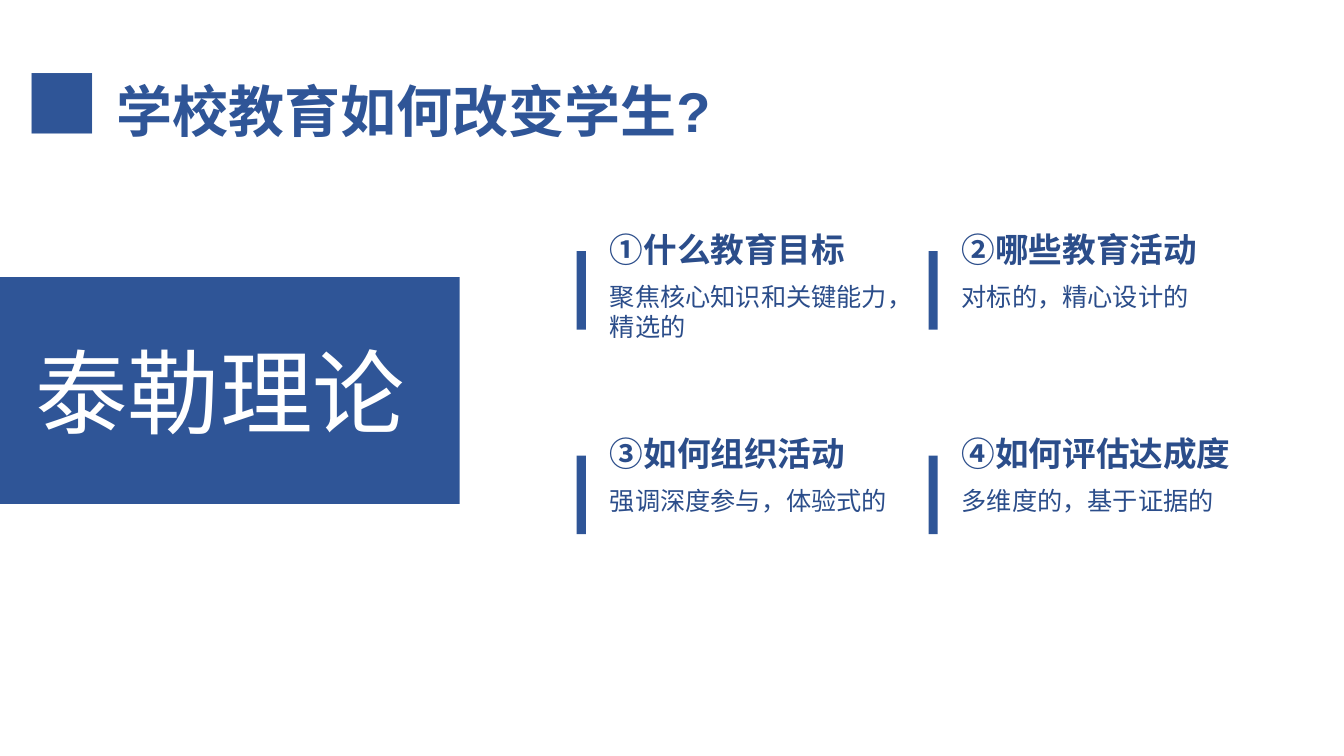
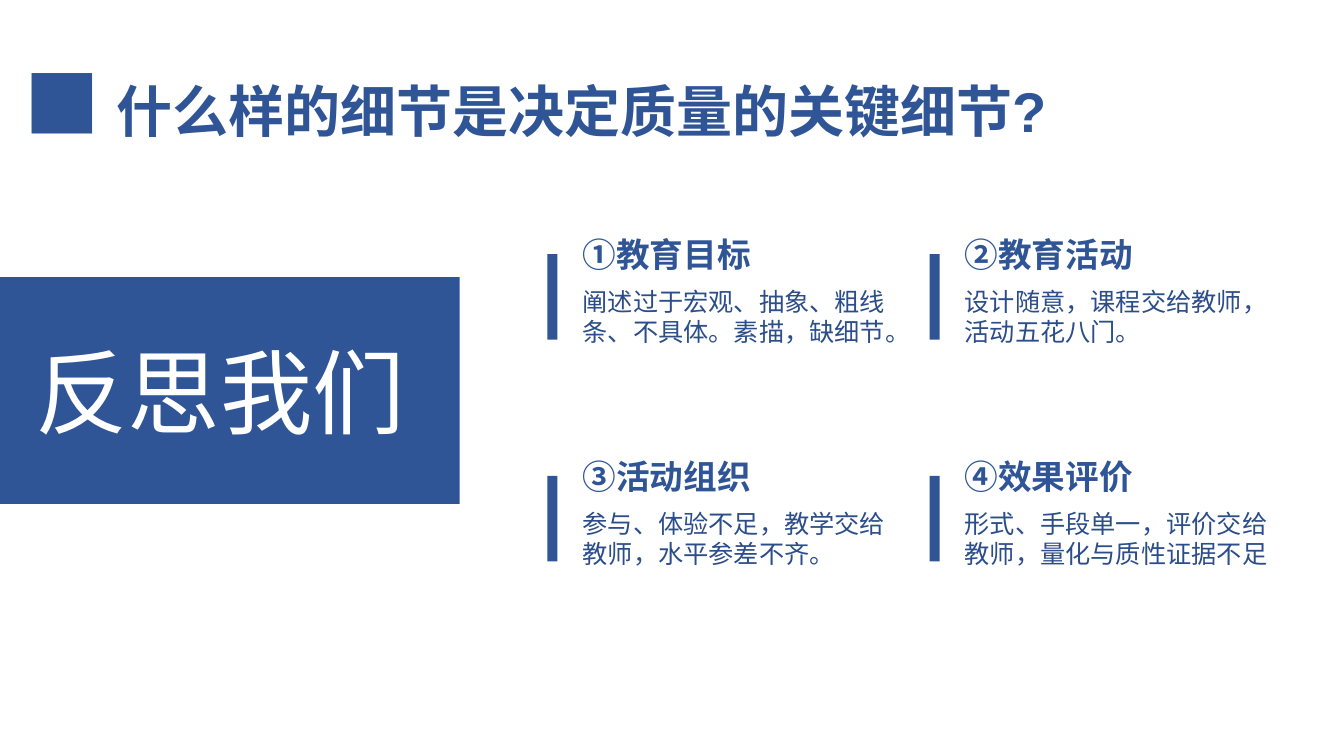
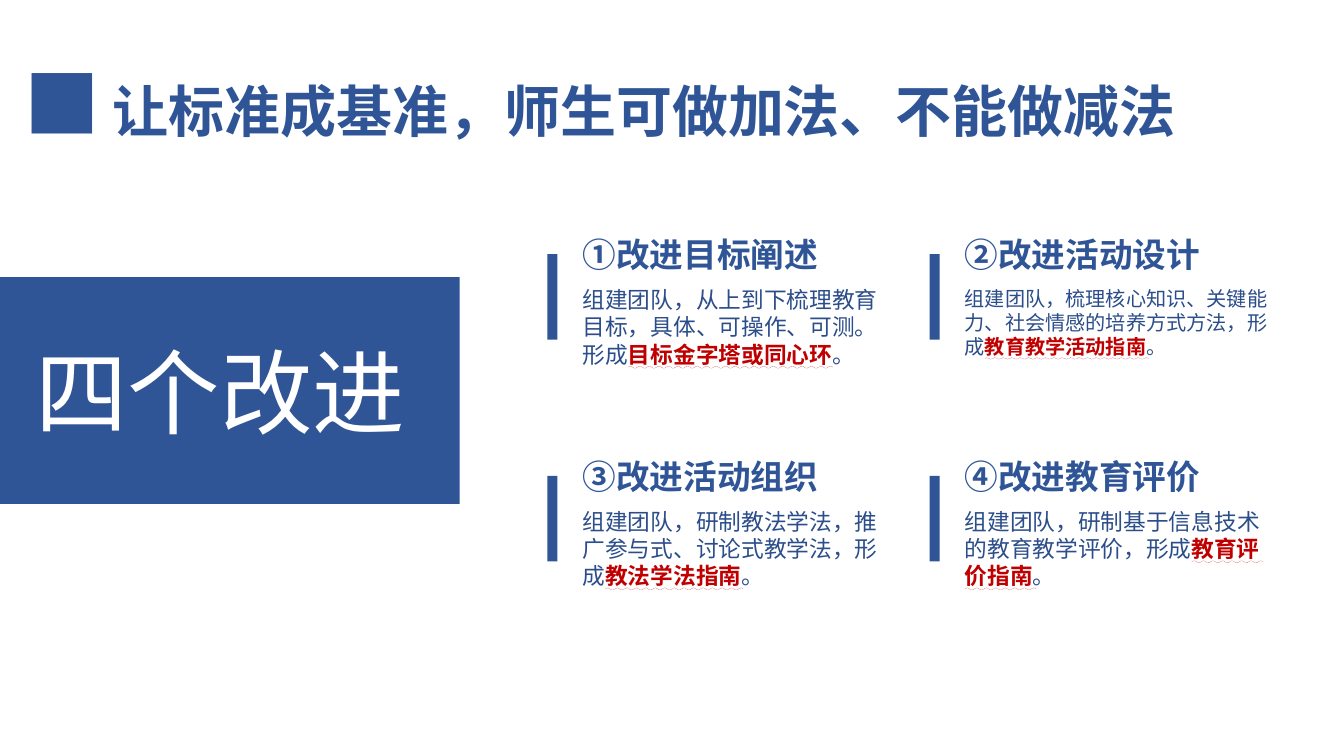
from dataclasses import dataclass

from pptx import Presentation
from pptx.dml.color import RGBColor
from pptx.enum import lang, shapes, text
from pptx.util import Inches, Pt


@dataclass(frozen=True)
class Theme:
    font: str = "Arial"
    blue: str = "2F5597"
    deep_blue: str = "2B4D8A"
    red: str = "C00000"
    white: str = "FFFFFF"
    marker_size: float = 54
    title_size: float = 40
    label_size: float = 66
    heading_size: float = 24
    detail_size: float = 18
    line_pitch: float = 1.2


@dataclass(frozen=True)
class Grid:
    """Two columns of points; scale shrinks every length except the origin."""
    left: float
    top: float
    scale: float = 1

    def box(self, index, dx, dy, width, height):
        row, column = divmod(index, 2)
        x = self.left + self.scale * (column * 3.79 + dx)
        y = self.top + self.scale * (row * 2.2 + dy)
        return [Inches(round(v, 2))
                for v in (x, y, self.scale * width, self.scale * height)]


THEME = Theme()


def style(font, size=None, color=None, bold=None):
    font.name = THEME.font
    if size:
        font.size = Pt(size)
    if color:
        font.color.rgb = RGBColor.from_string(color)
    if bold is not None:
        font.bold = bold


def add_run(paragraph, words):
    run = paragraph.add_run()
    run.text = words
    run.font.language_id = lang.MSO_LANGUAGE_ID.SIMPLIFIED_CHINESE
    return run


def add_block(slide, box):
    block = slide.shapes.add_shape(shapes.MSO_SHAPE.RECTANGLE, *box)
    block.shadow.inherit = False
    block.fill.solid()
    block.fill.fore_color.rgb = RGBColor.from_string(THEME.blue)
    block.line.fill.background()
    return block


def add_text(slide, box, size, color, anchor, bold=None):
    """Add a wrapping text box and return its styled, empty paragraph."""
    frame = slide.shapes.add_textbox(*box).text_frame
    frame.word_wrap = True
    frame.vertical_anchor = anchor
    paragraph = frame.paragraphs[0]
    paragraph.line_spacing = Pt(round(size * THEME.line_pitch, 1))
    style(paragraph.font, size, color, bold)
    return paragraph


def set_title(slide, words, marker="■ ", width=10.76):
    title = slide.shapes.title
    title.left, title.top = Inches(0.14), Inches(0.07)
    title.width, title.height = Inches(width), Inches(1.89)
    frame = title.text_frame
    frame.auto_size = text.MSO_AUTO_SIZE.NONE
    frame.vertical_anchor = text.MSO_ANCHOR.MIDDLE
    paragraph = frame.paragraphs[0]
    paragraph.alignment = text.PP_ALIGN.LEFT
    style(paragraph.font, color=THEME.blue)
    add_run(paragraph, marker).font.size = Pt(THEME.marker_size)
    style(add_run(paragraph, words).font, THEME.title_size, bold=True)


def add_label(slide, words):
    panel = add_block(slide, [Inches(v) for v in (0, 2.75, 4.56, 2.25)])
    frame = panel.text_frame
    frame.margin_right = Inches(0.29)
    frame.vertical_anchor = text.MSO_ANCHOR.MIDDLE
    paragraph = frame.paragraphs[0]
    paragraph.alignment = text.PP_ALIGN.CENTER
    style(paragraph.font, THEME.label_size, THEME.white)
    add_run(paragraph, words)


def add_point(slide, grid, index, heading_color, heading, detail,
              result="", size=THEME.detail_size):
    """Add a bar, a heading and a detail that may end in a marked result."""
    add_block(slide, grid.box(index, 0, 0.44, 0.1, 0.85))
    add_run(add_text(slide, grid.box(index, 0.25, 0, 3.22, 0.69),
                     THEME.heading_size, heading_color,
                     text.MSO_ANCHOR.BOTTOM, True), heading)
    paragraph = add_text(slide, grid.box(index, 0.25, 0.71, 3.22, 0.88),
                         size, THEME.deep_blue, text.MSO_ANCHOR.TOP)
    add_run(paragraph, detail)
    if result:
        marked = add_run(paragraph, result).font
        style(marked, color=THEME.red, bold=True)
        marked.underline = text.MSO_UNDERLINE.WAVY_LINE
        add_run(paragraph, "。")


def add_slide(deck, label, points, grid, heading_color=THEME.blue):
    slide = deck.slides.add_slide(deck.slide_layouts[5])
    add_label(slide, label)
    for index, point in enumerate(points):
        add_point(slide, grid, index, heading_color, *point)
    return slide


def main():
    deck = Presentation()
    deck.slide_width, deck.slide_height = Inches(13.33), Inches(7.5)
    wide = Grid(5.43, 2.08)

    theory = add_slide(deck, "泰勒理论", [
        ("①什么教育目标", "聚焦核心知识和关键能力，精选的"),
        ("②哪些教育活动", "对标的，精心设计的"),
        ("③如何组织活动", "强调深度参与，体验式的"),
        ("④如何评估达成度", "多维度的，基于证据的"),
    ], Grid(5.72, 2.09, 0.92), THEME.deep_blue)
    set_title(theory, "学校教育如何改变学生?")

    reflection = add_slide(deck, "反思我们", [
        ("①教育目标", "阐述过于宏观、抽象、粗线条、不具体。素描，缺细节。"),
        ("②教育活动", "设计随意，课程交给教师，活动五花八门。"),
        ("③活动组织", "参与、体验不足，教学交给教师，水平参差不齐。"),
        ("④效果评价", "形式、手段单一，评价交给教师，量化与质性证据不足"),
    ], wide)
    set_title(reflection, "什么样的细节是决定质量的关键细节?")

    improvement = add_slide(deck, "四个改进", [
        ("①改进目标阐述",
         "组建团队，从上到下梳理教育目标，具体、可操作、可测。形成",
         "目标金字塔或同心环", 16.2),
        ("②改进活动设计",
         "组建团队，梳理核心知识、关键能力、社会情感的培养方式方法，形成",
         "教育教学活动指南", 14.4),
        ("③改进活动组织",
         "组建团队，研制教法学法，推广参与式、讨论式教学法，形成",
         "教法学法指南", 16.2),
        ("④改进教育评价",
         "组建团队，研制基于信息技术的教育教学评价，形成",
         "教育评价指南", 16.2),
    ], wide)
    set_title(improvement, " 让标准成基准，师生可做加法、不能做减法", "■", 12.87)

    deck.save("out.pptx")


if __name__ == "__main__":
    main()
